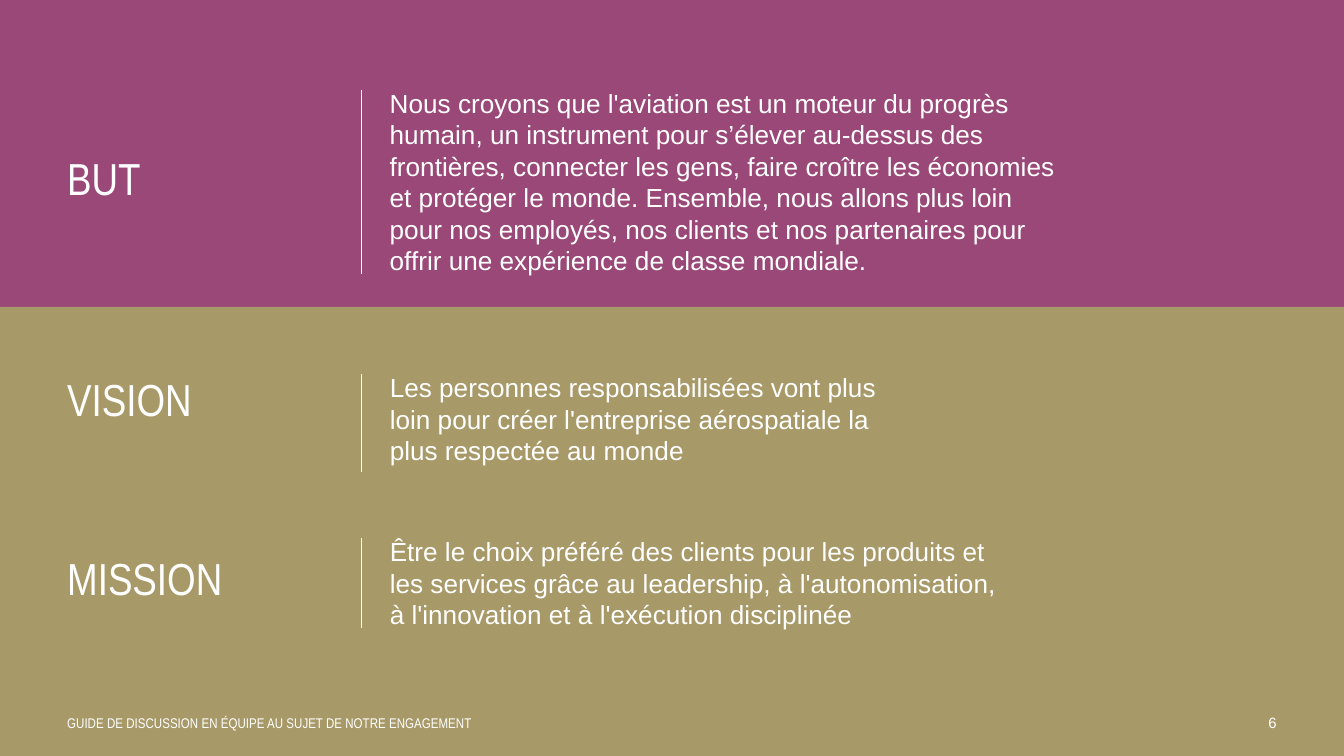
from dataclasses import dataclass
from lxml.etree import SubElement
from pptx import Presentation
from pptx.dml.color import RGBColor
from pptx.enum.shapes import MSO_CONNECTOR, MSO_SHAPE
from pptx.enum.text import MSO_ANCHOR, PP_ALIGN
from pptx.oxml.ns import qn
from pptx.util import Inches, Pt


@dataclass(frozen=True)
class Theme:
    plum: RGBColor = RGBColor.from_string("994878")
    sand: RGBColor = RGBColor.from_string("A89968")
    white: RGBColor = RGBColor.from_string("FFFFFF")
    body_font: str = "Arial"
    heading_font: str = "Arial Narrow"
    heading_size: float = 24
    body_size: float = 14
    footer_size: float = 7.5
    number_size: float = 8
    rule_width: float = 1


theme = Theme()
presentation = Presentation()
presentation.slide_width = Inches(10)
presentation.slide_height = presentation.slide_width * 9 // 16
slide = presentation.slides.add_slide(presentation.slide_layouts[6])
slide.background.fill.solid()
slide.background.fill.fore_color.rgb = theme.plum

columns, rows = 100, 56.25
column = presentation.slide_width / columns
row = presentation.slide_height / rows


def grid(left, top, width, height):
    return [round(length) for length in (left * column, top * row, width * column, height * row)]


def add_text(lines, place, font, size, anchor=MSO_ANCHOR.TOP, inset=0):
    box = slide.shapes.add_textbox(*grid(*place))
    frame = box.text_frame
    frame.word_wrap = True
    frame.vertical_anchor = anchor
    frame.margin_left = frame.margin_right = frame.margin_bottom = 0
    frame.margin_top = Inches(inset)
    paragraph = frame.paragraphs[0]
    for index, line in enumerate(lines):
        if index:
            paragraph.add_line_break()
        run = paragraph.add_run()
        run.text = line
        run.font.name = font
        run.font.size = Pt(size)
        run.font.color.rgb = theme.white
    return paragraph


margin = 5
rule_left = 26.9
body_left = 29
footer_top = 53
band_top = 22.84

band = slide.shapes.add_shape(MSO_SHAPE.RECTANGLE, *grid(0, band_top, columns, rows - band_top))
band.shadow.inherit = False
band.fill.solid()
band.fill.fore_color.rgb = theme.sand
band.line.fill.background()

add_text(["GUIDE DE DISCUSSION EN ÉQUIPE AU SUJET DE NOTRE ENGAGEMENT"],
         (margin, footer_top, 43.5, 2), theme.heading_font, theme.footer_size, inset=0.02)
page_number = add_text(["6"], (90, footer_top, 5, 2), theme.body_font, theme.number_size, inset=0.01)
page_number.alignment = PP_ALIGN.RIGHT

sections = [
    ("BUT", 6.5, 13.9, 13.9, 51, 16.9, [
        "Nous croyons que l'aviation est un moteur du progrès humain, un instrument pour "
        "s’élever au-dessus des frontières, connecter les gens, faire croître les économies "
        "et protéger le monde. Ensemble, nous allons plus loin ",
        "pour nos employés, nos clients et nos partenaires pour offrir une expérience "
        "de classe mondiale."]),
    ("VISION", 27.66, 4.5, 7.45, 36.8, 6.5, [
        "Les personnes responsabilisées vont plus loin pour créer l'entreprise "
        "aérospatiale la plus respectée au monde"]),
    ("MISSION", 39.86, 6.8, 6.85, 45.2, 8.2, [
        "Être le choix préféré des clients pour les produits et les services grâce au "
        "leadership, à l'autonomisation, à l'innovation et à l'exécution disciplinée"]),
]

for title, top, title_height, rule_drop, body_width, body_height, lines in sections:
    body = add_text(lines, (body_left, top, body_width, body_height), theme.body_font, theme.body_size)
    body.space_after = Pt(8)
    heading = add_text([title], (margin, top, rule_left - margin, title_height),
                       theme.heading_font, theme.heading_size, MSO_ANCHOR.MIDDLE)
    heading.line_spacing = 0.9
    rule_x, rule_top, _, rule_bottom = grid(rule_left, top + 0.2, 0, top + rule_drop)
    rule = slide.shapes.add_connector(MSO_CONNECTOR.STRAIGHT, rule_x, rule_top, rule_x, rule_bottom)
    rule.line.color.rgb = theme.white
    rule.line.width = Pt(theme.rule_width)
    SubElement(rule._element.spPr, qn("a:effectLst"))

presentation.save("out.pptx")
